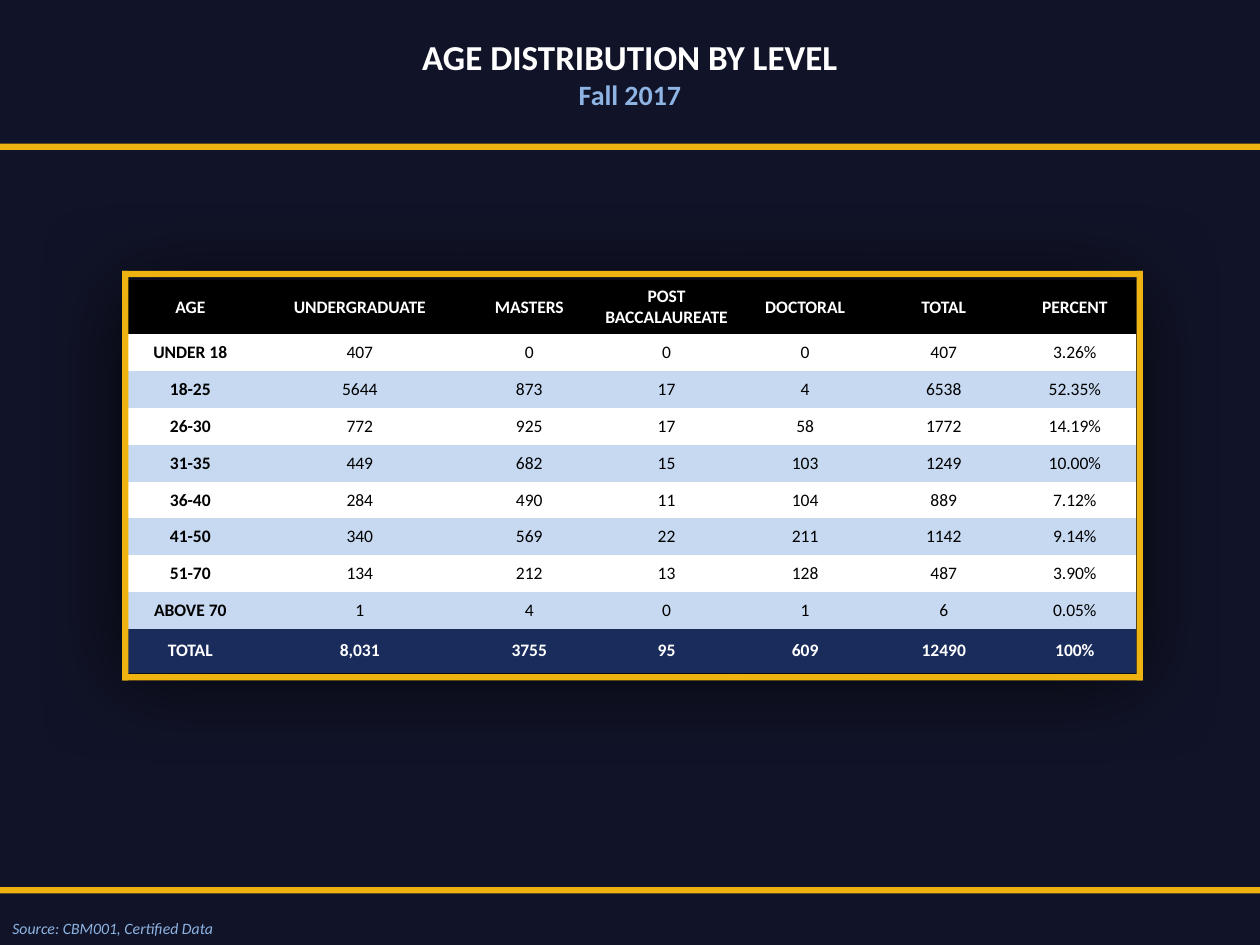
"""Build the slide with the age distribution table by student level."""
from lxml import etree
from pptx import Presentation
from pptx.dml.color import RGBColor
from pptx.enum.shapes import MSO_SHAPE
from pptx.enum.text import MSO_ANCHOR, PP_ALIGN
from pptx.oxml import parse_xml
from pptx.oxml.ns import qn
from pptx.util import Inches, Pt

RECTANGLE = MSO_SHAPE.RECTANGLE
MIDDLE = MSO_ANCHOR.MIDDLE
CENTER, LEFT = PP_ALIGN.CENTER, PP_ALIGN.LEFT

NIGHT = RGBColor(0x11, 0x14, 0x28)
GOLD = RGBColor(0xEE, 0xB2, 0x11)
SKY = RGBColor(0x8E, 0xB4, 0xE3)
PALE = RGBColor(0xC6, 0xD9, 0xF1)
NAVY = RGBColor(0x1A, 0x2C, 0x5C)
WHITE = RGBColor(0xFF, 0xFF, 0xFF)
BLACK = RGBColor(0x00, 0x00, 0x00)

FONT = "Calibri"
NO_GRID_STYLE = "{2D5ABB26-0587-4C30-8999-92F81FD0307C}"
GLOW = (
    '<a:effectLst xmlns:a="http://schemas.openxmlformats.org/drawingml/2006/main">'
    f'<a:outerShdw blurRad="{Pt(50)}" dist="{Pt(4)}" dir="5400000" algn="ctr">'
    '<a:srgbClr val="000000"><a:alpha val="80000"/></a:srgbClr>'
    "</a:outerShdw></a:effectLst>"
)

PAGE_WIDTH, PAGE_HEIGHT = 10, 7.5
BAR = 0.05
FRAME_LEFT, FRAME_TOP, FRAME_WIDTH, FRAME_HEIGHT = 0.97, 2.15, 8.1, 3.25
COLUMN_WIDTHS = [1.08, 1.61, 1.08, 1.1, 1.1, 1.1, 0.98]
ROWS = [
    ["AGE", "UNDERGRADUATE", "MASTERS", "POST BACCALAUREATE", "DOCTORAL", "TOTAL", "PERCENT"],
    ["UNDER 18", "407", "0", "0", "0", "407", "3.26%"],
    ["18-25", "5644", "873", "17", "4", "6538", "52.35%"],
    ["26-30", "772", "925", "17", "58", "1772", "14.19%"],
    ["31-35", "449", "682", "15", "103", "1249", "10.00%"],
    ["36-40", "284", "490", "11", "104", "889", "7.12%"],
    ["41-50", "340", "569", "22", "211", "1142", "9.14%"],
    ["51-70", "134", "212", "13", "128", "487", "3.90%"],
    ["ABOVE 70", "1", "4", "0", "1", "6", "0.05%"],
    ["TOTAL", "8,031", "3755", "95", "609", "12490", "100%"],
]
LAST = len(ROWS) - 1
ROW_HEIGHTS = [0.43] + [0.2925] * (LAST - 1) + [0.35]


def write(para, words, size, color, align, bold=False, italic=False):
    para.alignment = align
    span = para.add_run()
    span.text = words
    span.font.name = FONT
    span.font.size = Pt(size)
    span.font.bold = bold
    span.font.italic = italic
    span.font.color.rgb = color


def add_bar(left, top, width, height):
    bar = page.shapes.add_shape(RECTANGLE, *map(Inches, (left, top, width, height)))
    bar.shadow.inherit = False
    bar.fill.solid()
    bar.fill.fore_color.rgb = GOLD
    bar.line.fill.background()


deck = Presentation()
deck.slide_width, deck.slide_height = Inches(PAGE_WIDTH), Inches(PAGE_HEIGHT)
page = deck.slides.add_slide(deck.slide_layouts[6])
page.background.fill.solid()
page.background.fill.fore_color.rgb = NIGHT

title_box = page.shapes.add_textbox(0, Inches(0.23), deck.slide_width, Inches(1.01))
title_frame = title_box.text_frame
title_frame.word_wrap = True
write(title_frame.paragraphs[0], "AGE DISTRIBUTION BY LEVEL", 20, WHITE, CENTER, bold=True)
write(title_frame.add_paragraph(), "Fall 2017", 16, SKY, CENTER, bold=True)

source_box = page.shapes.add_textbox(0, Inches(7.24), Inches(1.8), Inches(0.25))
source_box.text_frame.word_wrap = False
write(source_box.text_frame.paragraphs[0], "Source: CBM001, Certified Data", 9, SKY, LEFT, italic=True)

for rule_top in (7.04, 1.14):
    add_bar(0, rule_top, PAGE_WIDTH, BAR)

table_box = page.shapes.add_table(
    len(ROWS), len(COLUMN_WIDTHS), Inches(FRAME_LEFT), Inches(2.22),
    Inches(sum(COLUMN_WIDTHS)), Inches(sum(ROW_HEIGHTS)),
)
table = table_box.table
table.first_row = table.horz_banding = False
properties = table_box.element.find(".//" + qn("a:tblPr"))
properties.find(qn("a:tableStyleId")).text = NO_GRID_STYLE
properties.insert(0, parse_xml(etree.tostring(etree.fromstring(GLOW))))

for column, width in zip(table.columns, COLUMN_WIDTHS):
    column.width = Inches(width)
for row, height in zip(table.rows, ROW_HEIGHTS):
    row.height = Inches(height)

for row_index, values in enumerate(ROWS):
    is_edge = row_index in (0, LAST)
    band = PALE if row_index % 2 == 0 else WHITE
    fill_color = {0: BLACK, LAST: NAVY}.get(row_index, band)
    for column_index, value in enumerate(values):
        cell = table.cell(row_index, column_index)
        cell.fill.solid()
        cell.fill.fore_color.rgb = fill_color
        cell.vertical_anchor = MIDDLE
        cell.margin_left = cell.margin_right = Inches(0.05)
        cell.margin_top = cell.margin_bottom = Inches(0.05)
        write(cell.text_frame.paragraphs[0], value, 10, WHITE if is_edge else BLACK,
              CENTER, bold=is_edge or column_index == 0)

for edge_top in (FRAME_TOP, FRAME_TOP + FRAME_HEIGHT - BAR):
    add_bar(FRAME_LEFT, edge_top, FRAME_WIDTH, BAR)
for edge_left in (FRAME_LEFT, FRAME_LEFT + FRAME_WIDTH - BAR):
    add_bar(edge_left, FRAME_TOP, BAR, FRAME_HEIGHT)

deck.save("out.pptx")
